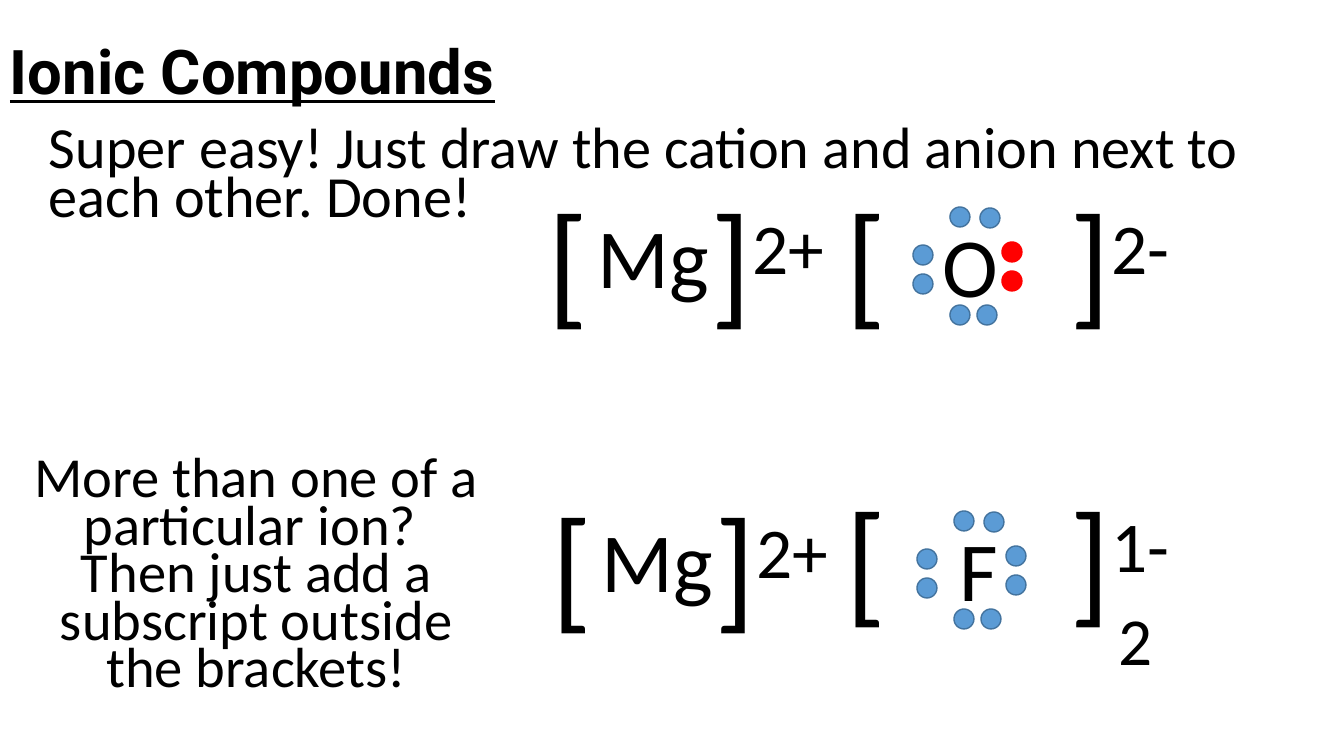
from lxml.etree import SubElement
from pptx import Presentation
from pptx.dml.color import RGBColor
from pptx.enum.shapes import MSO_SHAPE as Shape
from pptx.enum.text import MSO_ANCHOR as Anchor, PP_ALIGN as Align
from pptx.oxml.ns import qn
from pptx.util import Pt

PX = 914400 / 100.8
BLACK = RGBColor(0x00, 0x00, 0x00)
BLUE = RGBColor(0x5B, 0x9B, 0xD5)
BLUE_EDGE = RGBColor(0x43, 0x73, 0x9E)
RED = RGBColor(0xFF, 0x00, 0x00)


def px(*lengths):
    return [round(length * PX) for length in lengths]


def add_text(box, text, size, font="Calibri"):
    """Add a text box at box (px) and return its paragraph and first run."""
    frame = slide.shapes.add_textbox(*px(*box)).text_frame
    frame.word_wrap = True
    paragraph = frame.paragraphs[0]
    run = paragraph.add_run()
    run.text = text
    run.font.size = Pt(size)
    run.font.name = font
    run.font.color.rgb = BLACK
    return paragraph, run


prs = Presentation()
prs.slide_width, prs.slide_height = px(1344, 756)
slide = prs.slides.add_slide(prs.slide_layouts[6])

# Title
title, title_run = add_text((0, 2, 1159, 146), "Ionic Compounds", 44, "Roboto")
title.line_spacing = 0.9
title_run.font.bold = True
title_run.font.underline = True
title_run._r.getparent().getparent().bodyPr.set("anchor", "ctr")

# Explanations
intro, _ = add_text(
    (39, 124, 1292, 160),
    "Super easy! Just draw the cation and anion next to each other. Done!", 41.6)
subscript_tip, _ = add_text(
    (11, 455, 491, 267), "More than one of a particular ion? ", 40.4)
subscript_tip.alignment = Align.CENTER
subscript_tip.add_line_break()
tip_end = subscript_tip.add_run()
tip_end.text = "Then just add a subscript outside the brackets!"
tip_end.font.size = Pt(40.4)
tip_end.font.name = "Calibri"
tip_end.font.color.rgb = BLACK
for explanation in (intro, subscript_tip):
    explanation.line_spacing = 0.7
    explanation.space_before = Pt(10)

# Brackets with charges: left, top, width, gap to closing bracket, charge
ions = [
    (836, 172, 453, 224, "2-"),
    (836, 470, 453, 224, "1-"),
    (538, 172, 326, 163, "2+"),
    (542, 476, 453, 163, "2+"),
]
for left, top, width, closing, charge in ions:
    bracket, _ = add_text((left, top, width, 173), "[\t]", 96)
    tabs = SubElement(bracket._p.get_or_add_pPr(), qn("a:tabLst"))
    SubElement(tabs, qn("a:tab"), pos=str(px(closing)[0]), algn="l")
    charge_run = bracket.add_run()
    charge_run.text = charge
    charge_run.font.size = Pt(88)
    charge_run.font.name = "Calibri"
    charge_run.font.color.rgb = BLACK
    charge_run._r.get_or_add_rPr().set("baseline", "30000")

# Element symbols and the subscript
add_text((588, 200, 143, 112), "Mg", 60)
add_text((592, 504, 143, 112), "Mg", 60)
add_text((933, 209, 205, 112), "O", 60)
add_text((950, 513, 205, 112), "F", 60)
add_text((1109, 593, 205, 92), "2", 48)

# Valence electrons: the same ring around O and F
shared = [(950, 207), (980, 208), (913, 245), (913, 274), (950, 305), (977, 305)]
right_pair = [(1002, 242), (1002, 271)]
for dx, dy, pair_fill, pair_edge in ((0, 0, RED, RED), (4, 304, BLUE, BLUE_EDGE)):
    for x, y in shared + right_pair:
        in_pair = (x, y) in right_pair
        electron = slide.shapes.add_shape(Shape.OVAL, *px(x + dx, y + dy, 20, 20))
        electron.shadow.inherit = False
        electron.fill.solid()
        electron.fill.fore_color.rgb = pair_fill if in_pair else BLUE
        electron.line.color.rgb = pair_edge if in_pair else BLUE_EDGE
        electron.line.width = Pt(1)

prs.save("out.pptx")
